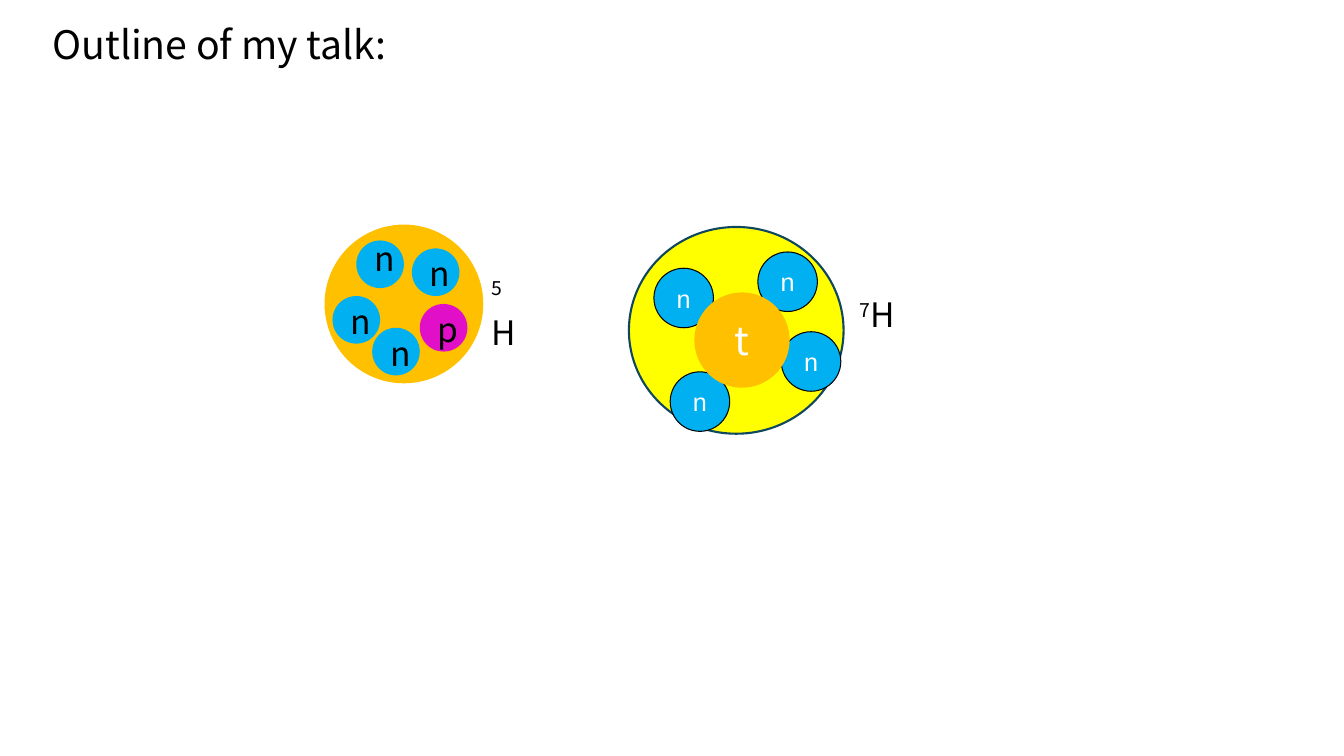
"""Builds the outline slide comparing the 5H and 7H nuclei."""
from pptx import Presentation
from pptx.dml.color import RGBColor
from pptx.enum import shapes, text
from pptx.util import Cm, Pt

SANS = "Noto Sans CJK JP"
BLACK, WHITE = "000000", "FFFFFF"
ORANGE, BLUE, MAGENTA, YELLOW = "FFC000", "00B0F0", "E10FC8", "FFFF00"


def rgb(color):
    """Turn a hex string into a colour."""
    return RGBColor.from_string(color)


def style(p, size, color, font=SANS, align=text.PP_ALIGN.LEFT):
    """Set the font and alignment of a paragraph."""
    p.alignment = align
    p.font.size, p.font.name = Pt(size), font
    p.font.color.rgb = rgb(color)


def add_title(s, words):
    """Place and format the title placeholder."""
    sp = s.shapes.title
    sp.left, sp.top, sp.width, sp.height = Cm(1.07), Cm(0.38), Cm(8.94), Cm(3.5)
    tf = sp.text_frame
    tf.text = words
    tf.word_wrap = False
    tf.auto_size = text.MSO_AUTO_SIZE.NONE
    tf.vertical_anchor = text.MSO_ANCHOR.TOP
    style(tf.paragraphs[0], 28, BLACK)


def add_ball(s, x, y, w, h, fill, line=None, line_width=0.75):
    """Draw a filled ellipse, outlined if a line colour is given."""
    sp = s.shapes.add_shape(shapes.MSO_SHAPE.OVAL, Cm(x), Cm(y), Cm(w), Cm(h))
    sp.shadow.inherit = False
    sp.fill.solid()
    sp.fill.fore_color.rgb = rgb(fill)
    if line:
        sp.line.color.rgb = rgb(line)
        sp.line.width = Pt(line_width)
    else:
        sp.line.fill.background()
    return sp


def write_in(sp, letter, size, font, wrap):
    """Write a centred white letter inside a ball."""
    tf = sp.text_frame
    tf.text = letter
    tf.word_wrap = wrap
    tf.vertical_anchor = text.MSO_ANCHOR.MIDDLE
    style(tf.paragraphs[0], size, WHITE, font, text.PP_ALIGN.CENTER)


def add_label(s, x, y, w, letter, mass="", wrap=False):
    """Add a black label, with a raised mass number if given."""
    tf = s.shapes.add_textbox(Cm(x), Cm(y), Cm(w), Cm(1.27)).text_frame
    tf.word_wrap = wrap
    p = tf.paragraphs[0]
    style(p, 24, BLACK)
    if mass:
        r = p.add_run()
        r.text = mass
        r._r.get_or_add_rPr().set("baseline", "30000")
    p.add_run().text = letter


def add_hydrogen_5(s):
    """Draw the compact nucleus of five nucleons."""
    left, top = 8.18, 5.66
    add_ball(s, left, top, 4, 4, ORANGE)
    nucleons = [("n", 0.2, 1.8, 0), ("p", 2.4, 2, 0), ("n", 0.8, 0.4, -0.2),
                ("n", 2.2, 0.6, 0), ("n", 1.2, 2.6, 0)]
    for letter, dx, dy, shift in nucleons:
        x, y = left + dx, top + dy
        add_ball(s, x, y, 1.2, 1.2, MAGENTA if letter == "p" else BLUE)
        add_label(s, x + 0.2, y + shift, 0.97, letter)
    add_label(s, 12.14, 6.73, 1.35, "H", "5", wrap=True)


def add_hydrogen_7(s):
    """Draw the triton core with its four halo neutrons."""
    add_ball(s, 15.85, 5.72, 5.41, 5.21, YELLOW, "104760", 1.5)
    for x, y in [(16.48, 6.76), (19.1, 6.35), (19.69, 8.36), (16.89, 9.37)]:
        neutron = add_ball(s, x, y, 1.5, 1.5, BLUE, BLACK)
        write_in(neutron, "n", 18, "Arial", False)
    triton = add_ball(s, 17.5, 7.37, 2.4, 2.4, ORANGE)
    write_in(triton, "t", 28, SANS, True)
    add_label(s, 21.41, 7.29, 1.47, "H", "7")


def main():
    """Build and save the slide."""
    prs = Presentation()
    prs.slide_width, prs.slide_height = Cm(33.87), Cm(19.05)
    s = prs.slides.add_slide(prs.slide_layouts[5])
    add_title(s, "Outline of my talk:")
    add_hydrogen_5(s)
    add_hydrogen_7(s)
    prs.save("out.pptx")


if __name__ == "__main__":
    main()
